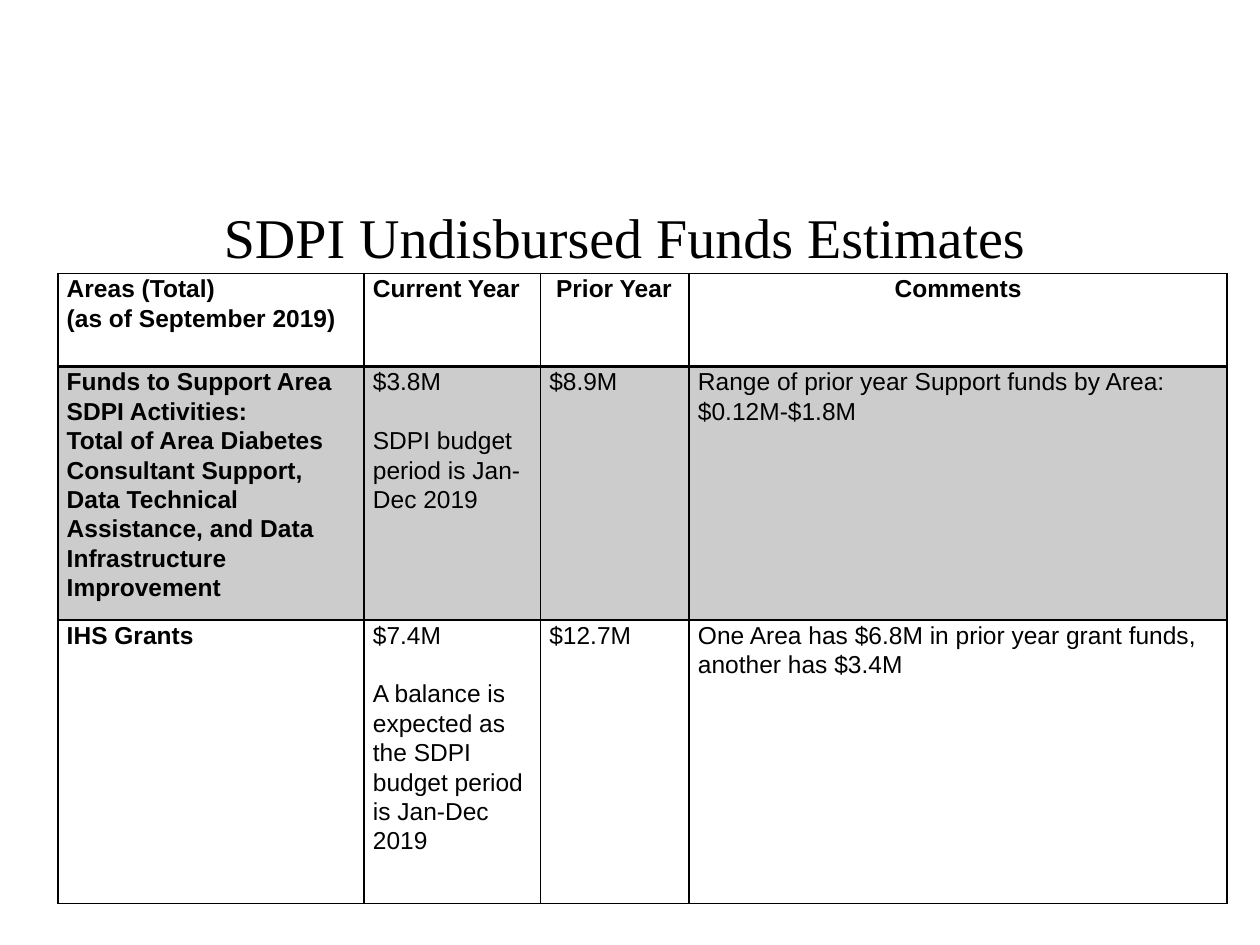
from dataclasses import dataclass

import pptx
import pptx.dml.color
import pptx.enum.text
import pptx.oxml
import pptx.oxml.ns
import pptx.util
from pptx.util import Inches

ALIGN = pptx.enum.text.PP_ALIGN


@dataclass(frozen=True)
class Theme:
    title_font: str = "Times New Roman"
    table_font: str = "Arial"
    title_size: float = 32
    table_size: float = 14
    blank_line: float = 16.8
    line_spacing: float = 1.07
    ink: str = "000000"
    paper: str = "FFFFFF"
    band: str = "CCCCCC"


THEME = Theme()
COLUMN_WIDTHS = [2.43, 1.4, 1.18, 4.27]
ROW_HEIGHTS = [0.74, 2.01, 2.25]
ROW_FILLS = [THEME.paper, THEME.band, THEME.paper]
ROWS = [
    [["Areas (Total)", "(as of September 2019)"], ["Current Year"], [" Prior Year"], ["Comments"]],
    [
        ["Funds to Support Area SDPI Activities:",
         "Total of Area Diabetes Consultant Support, Data Technical Assistance, "
         "and Data Infrastructure Improvement"],
        ["$3.8M", "SDPI budget period is Jan-Dec 2019"],
        ["$8.9M"],
        ["Range of prior year Support funds by Area: $0.12M-$1.8M"],
    ],
    [
        ["IHS Grants"],
        ["$7.4M", "A balance is expected as the SDPI budget period is Jan-Dec 2019"],
        ["$12.7M"],
        ["One Area has $6.8M in prior year grant funds, another has $3.4M"],
    ],
]


def rgb(color):
    return pptx.dml.color.RGBColor.from_string(color)


def write_text(frame, lines, font, size, bold=False, align=ALIGN.LEFT, spacing=1.0, gap=0):
    """Write one paragraph per line, with gap points before each after the first."""
    frame.word_wrap = True
    for index, line in enumerate(lines):
        para = frame.paragraphs[0] if index == 0 else frame.add_paragraph()
        para.alignment = align
        para.line_spacing = spacing
        if index and gap:
            para.space_before = pptx.util.Pt(gap)
        span = para.add_run()
        span.text = line
        span.font.name = font
        span.font.size = pptx.util.Pt(size)
        span.font.bold = bold
        span.font.color.rgb = rgb(THEME.ink)


def set_borders(cell, **widths):
    """Draw the L, R, T and B borders, 1 point wide unless given."""
    properties = cell._tc.get_or_add_tcPr()
    for side in "LRTB":
        width = pptx.util.Pt(widths.get(side, 1))
        properties.append(pptx.oxml.parse_xml(
            f'<a:ln{side} {pptx.oxml.ns.nsdecls("a")} w="{width}"><a:solidFill>'
            f'<a:srgbClr val="{THEME.ink}"/></a:solidFill></a:ln{side}>'))


def add_title(page, text):
    box = page.shapes.add_textbox(Inches(0.46), Inches(1.25), Inches(9), Inches(1.25))
    box.text_frame.vertical_anchor = pptx.enum.text.MSO_ANCHOR.MIDDLE
    write_text(box.text_frame, [text], THEME.title_font, THEME.title_size, align=ALIGN.CENTER)


def fill_cell(cell, lines, row, column):
    cell.margin_left = cell.margin_right = Inches(0.07)
    cell.margin_top = cell.margin_bottom = 0
    set_borders(cell, T=2 if row == 1 else 1, B=2 if row == 0 else 1)
    cell.fill.solid()
    cell.fill.fore_color.rgb = rgb(ROW_FILLS[row])
    write_text(
        cell.text_frame, lines, THEME.table_font, THEME.table_size,
        bold=row == 0 or column == 0,
        align=ALIGN.CENTER if (row, column) == (0, 3) else ALIGN.LEFT,
        spacing=THEME.line_spacing,
        gap=THEME.blank_line if column == 1 else 0,
    )


def add_funds_table(page):
    table = page.shapes.add_table(
        len(ROWS), len(COLUMN_WIDTHS), Inches(0.46), Inches(2.17),
        Inches(sum(COLUMN_WIDTHS)), Inches(sum(ROW_HEIGHTS))).table
    for column, width in zip(table.columns, COLUMN_WIDTHS):
        column.width = Inches(width)
    for row, height in enumerate(ROW_HEIGHTS):
        table.rows[row].height = Inches(height)
        for column, lines in enumerate(ROWS[row]):
            fill_cell(table.cell(row, column), lines, row, column)


def main():
    deck = pptx.Presentation()
    deck.slide_width = Inches(10)
    deck.slide_height = Inches(7.5)
    page = deck.slides.add_slide(deck.slide_layouts[6])
    add_title(page, "SDPI Undisbursed Funds Estimates")
    add_funds_table(page)
    deck.save("out.pptx")


if __name__ == "__main__":
    main()
